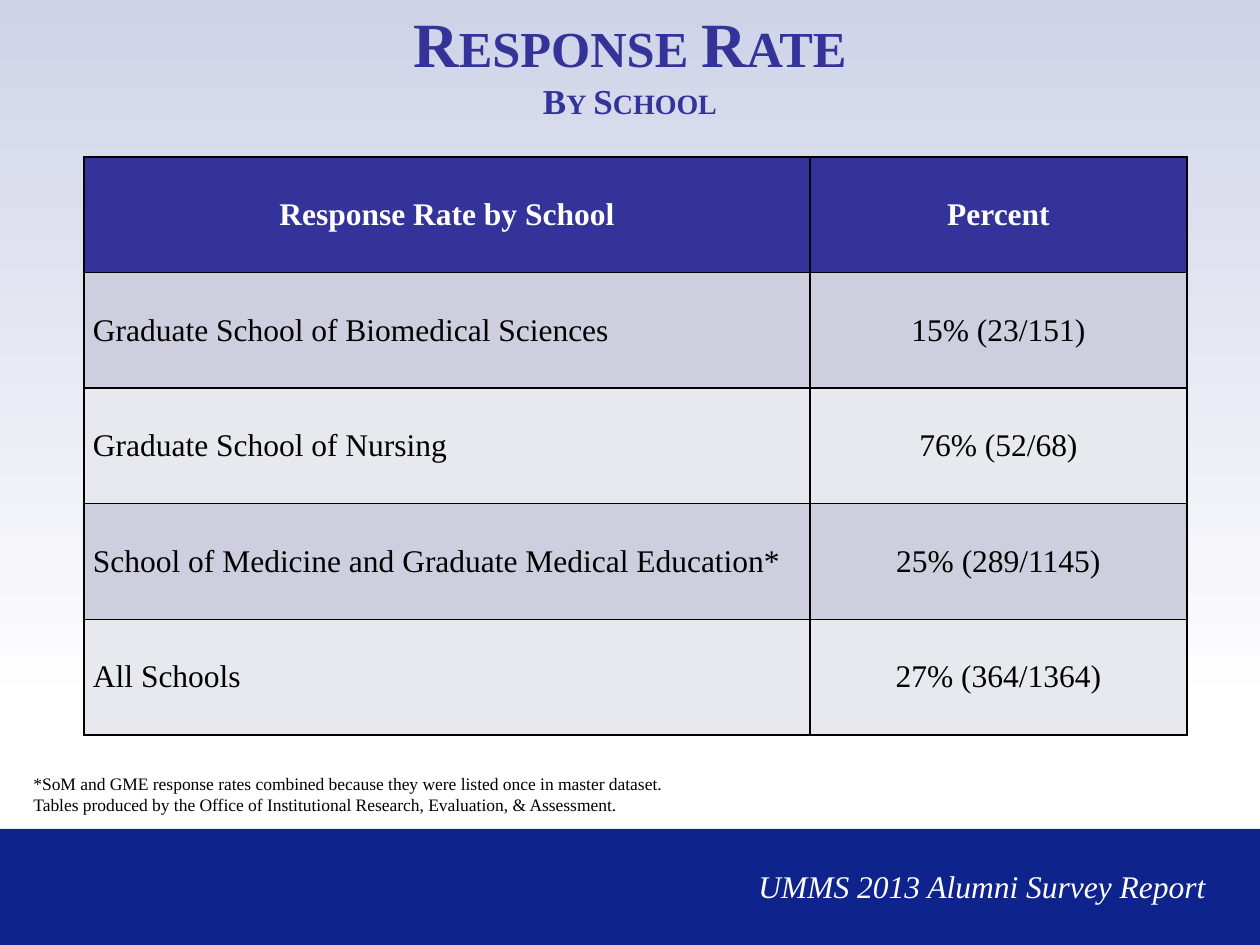
from dataclasses import dataclass

from lxml import etree
from pptx import Presentation, util as u
from pptx.dml.color import RGBColor
from pptx.enum import shapes, text
from pptx.oxml.ns import qn

TITLE = ("Response Rate", "By School")
HEADER = ("Response Rate by School", "Percent")
RATES = [
    ("Graduate School of Biomedical Sciences", "15% (23/151)"),
    ("Graduate School of Nursing", "76% (52/68)"),
    ("School of Medicine and Graduate Medical Education*", "25% (289/1145)"),
    ("All Schools", "27% (364/1364)"),
]
NOTES = (
    "*SoM and GME response rates combined because they were listed once in master dataset.",
    "Tables produced by the Office of Institutional Research, Evaluation, & Assessment.",
)
REPORT = "UMMS 2013 Alumni Survey Report"

SLIDE_W, SLIDE_H = 1260, 945
SKY_H, FOOTER_TOP = 714, 829
TABLE_LEFT, TABLE_TOP, TABLE_H = 84, 157, 578
COLUMNS = (726, 377)
CELL_INSET = 9


@dataclass(frozen=True)
class Theme:
    face: str = "Times New Roman"
    accent: str = "333399"
    footer: str = "0F238C"
    sky: str = "CFD3E8"
    bands: tuple = ("CECEDE", "E8E8EF")
    ink: str = "000000"
    paper: str = "FFFFFF"
    title: int = 36
    subtitle: int = 20
    body: int = 18
    note: int = 10


THEME = Theme()
CENTER, LEFT = text.PP_ALIGN.CENTER, text.PP_ALIGN.LEFT


def px(n):
    return u.Emu(n * 914400 // 126)


def rgb(value):
    return RGBColor.from_string(value)


def style(font, size, color, bold=False, italic=False):
    font.name, font.size = THEME.face, u.Pt(size)
    font.bold, font.italic = bold, italic
    font.color.rgb = rgb(color)


def add_backdrop(slide, top, height):
    """Add a full-width rectangle without outline or shadow."""
    panel = slide.shapes.add_shape(
        shapes.MSO_SHAPE.RECTANGLE, 0, px(top), px(SLIDE_W), px(height))
    panel.shadow.inherit = False
    panel.line.fill.background()
    return panel


def add_lines(slide, box, lines, size, color, **look):
    frame = slide.shapes.add_textbox(*map(px, box)).text_frame
    frame.word_wrap = True
    frame.text = "\n".join(lines)
    for paragraph in frame.paragraphs:
        for run in paragraph.runs:
            style(run.font, size, color, **look)
    return frame


def add_title(slide):
    frame = add_lines(slide, (0, 0, SLIDE_W, 126), ["\v".join(TITLE)],
                      THEME.title, THEME.accent, bold=True)
    frame.vertical_anchor = text.MSO_ANCHOR.MIDDLE
    heading = frame.paragraphs[0]
    heading.alignment = CENTER
    for run, size in zip(heading.runs, (THEME.title, THEME.subtitle)):
        run.font.size = u.Pt(size)
        run._r.get_or_add_rPr().set("cap", "small")


def add_borders(cell):
    properties = cell._tc.get_or_add_tcPr()
    for position, side in enumerate(("lnL", "lnR", "lnT", "lnB")):
        border = etree.Element(qn(f"a:{side}"), w=str(u.Pt(1)))
        fill = etree.SubElement(border, qn("a:solidFill"))
        etree.SubElement(fill, qn("a:srgbClr"), val=THEME.ink)
        properties.insert(position, border)


def add_rates(slide):
    rows = [HEADER, *RATES]
    table = slide.shapes.add_table(
        len(rows), len(COLUMNS), px(TABLE_LEFT), px(TABLE_TOP),
        px(sum(COLUMNS)), px(TABLE_H)).table
    for column, width in zip(table.columns, COLUMNS):
        column.width = px(width)
    for r, row in enumerate(rows):
        is_header = r == 0
        fill = THEME.accent if is_header else THEME.bands[(r - 1) % 2]
        for c, words in enumerate(row):
            cell = table.cell(r, c)
            cell.text = words
            cell.vertical_anchor = text.MSO_ANCHOR.MIDDLE
            cell.margin_left = cell.margin_right = px(CELL_INSET)
            cell.margin_top = cell.margin_bottom = 0
            cell.fill.solid()
            cell.fill.fore_color.rgb = rgb(fill)
            add_borders(cell)
            paragraph = cell.text_frame.paragraphs[0]
            paragraph.alignment = CENTER if is_header or c else LEFT
            style(paragraph.runs[0].font, THEME.body,
                  THEME.paper if is_header else THEME.ink, bold=is_header)


def main():
    deck = Presentation()
    deck.slide_width, deck.slide_height = px(SLIDE_W), px(SLIDE_H)
    slide = deck.slides.add_slide(deck.slide_layouts[6])

    sky = add_backdrop(slide, 0, SKY_H).fill
    sky.gradient()
    sky.gradient_angle = 270
    for stop, color in zip(sky.gradient_stops, (THEME.sky, THEME.paper)):
        stop.color.rgb = rgb(color)
    footer = add_backdrop(slide, FOOTER_TOP, SLIDE_H - FOOTER_TOP).fill
    footer.solid()
    footer.fore_color.rgb = rgb(THEME.footer)

    add_title(slide)
    add_rates(slide)
    add_lines(slide, (21, 767, 1018, 55), NOTES, THEME.note, THEME.ink)
    add_lines(slide, (746, 861, 483, 50), [REPORT], THEME.body, THEME.paper, italic=True)
    deck.save("out.pptx")


if __name__ == "__main__":
    main()
